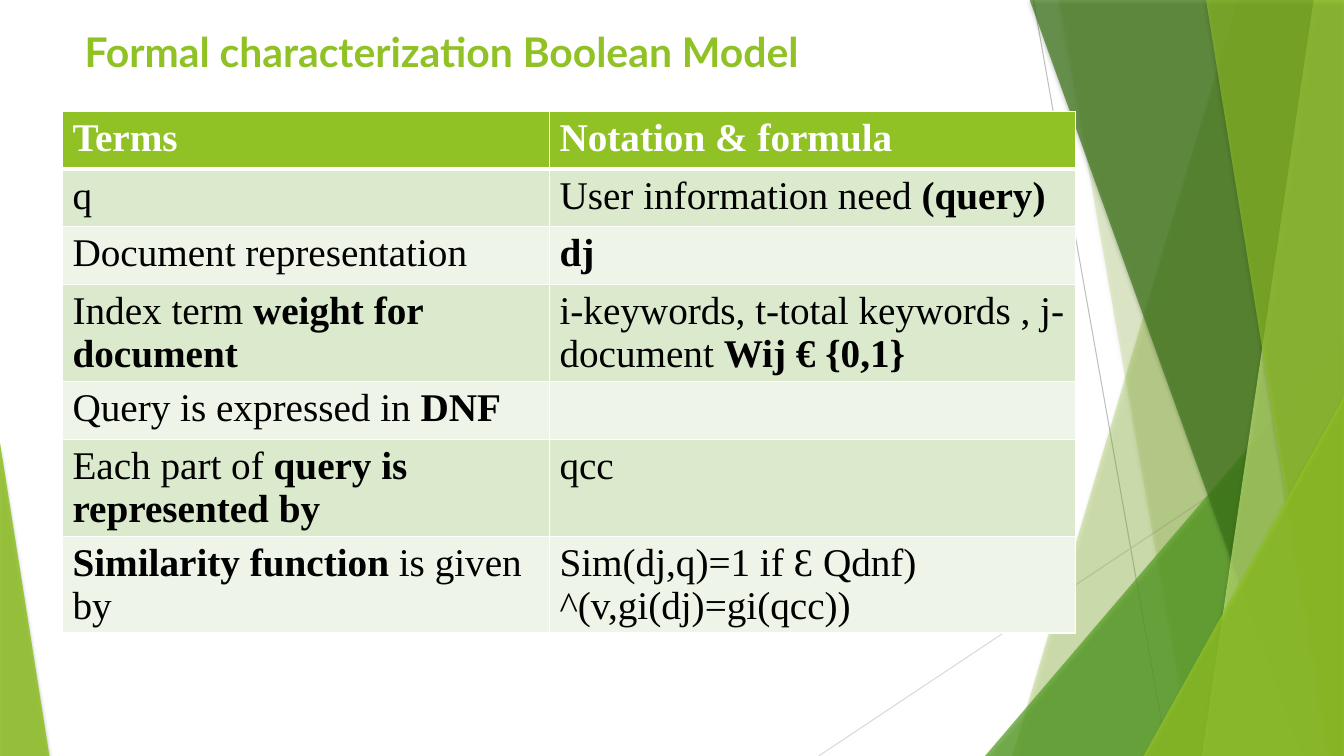
"""Build the slide on the formal characterization of the Boolean model."""
from lxml import etree
from pptx import Presentation
from pptx.dml.color import RGBColor
from pptx.enum.shapes import MSO_CONNECTOR, MSO_SHAPE
from pptx.enum.text import MSO_ANCHOR, PP_ALIGN
from pptx.oxml.ns import qn
from pptx.util import Inches, Pt

LINE = MSO_CONNECTOR.STRAIGHT
WEDGE = MSO_SHAPE.ISOSCELES_TRIANGLE
TOP = MSO_ANCHOR.TOP
LEFT = PP_ALIGN.LEFT

HUES = {
    "lime": "90C226", "green": "54A021", "dark": "3F7819", "pale": "C0E474",
    "band": "DBE9CC", "light": "EEF4E7", "white": "FFFFFF", "black": "000000",
    "gray": "BFBFBF", "mist": "D9D9D9",
}
WIDE, HIGH, EDGE = 13.33, 7.5, -0.01

LINES = [
    ((10.25, 0), (11.58, HIGH), "gray"),
    ((WIDE, 4.03), (8.12, HIGH), "mist"),
]
# Each panel reaches the right edge; only its left side varies.
RIGHT = [(WIDE, EDGE), (WIDE, HIGH)]
BACK = [(12.28, 10.04, "lime", 30), (10.5, 11.82, "lime", 20)]
FRONT = [
    (10.21, 12.91, "dark", 70),
    (13.03, 11.92, "pale", 70),
    (11.96, 13.17, "lime", 65),
]
DEEP = ((9.77, 3.33, 3.56, 4.17), 1, "green", 72)
NEAR = [
    ((11.34, 3.93, 1.99, 3.57), 1, "lime", 80),
    ((0, 4.39, 0.49, 3.11), 0, "lime", 85),
]

COLS = [4.83, 5.22]
TALL = [0.57, 0.57, 0.57, 0.97, 0.57, 0.96, 0.96]
ROWS = [
    ("*Terms", "*Notation & formula"),
    ("q", "User information need *(query)"),
    ("Document representation", "*dj"),
    ("Index term *weight for document",
     "i-keywords, t-total keywords , j-document *Wij € {0,1}"),
    ("Query is expressed in *DNF", ""),
    ("Each part of *query is represented by", "qcc"),
    ("*Similarity function* is given by",
     "Sim(dj,q)=1 if Ɛ Qdnf) ^(v,gi(dj)=gi(qcc))"),
]


def hue(name):
    """Return the named colour."""
    return RGBColor.from_string(HUES[name])


def tint(node, name, alpha=100):
    """Add a colour with an opacity in percent to an XML node."""
    color = etree.SubElement(node, qn("a:srgbClr"), val=HUES[name])
    if alpha < 100:
        etree.SubElement(color, qn("a:alpha"), val=str(alpha * 1000))


class Deck:
    """Hold the style and the current slide."""

    def __init__(self):
        """Start a deck with one title-only slide."""
        self.prs = Presentation()
        self.prs.slide_width = Inches(WIDE)
        self.prs.slide_height = Inches(HIGH)
        self.slide = self.prs.slides.add_slide(self.prs.slide_layouts[5])
        self.shapes = self.slide.shapes

    def line(self, start, end, color):
        """Draw a thin straight line."""
        ends = [Inches(v) for v in (*start, *end)]
        line = self.shapes.add_connector(LINE, *ends)
        line.line.color.rgb = hue(color)
        line.line.width = Pt(0.75)
        etree.SubElement(line._element.spPr, qn("a:effectLst"))

    def glass(self, shape, color, alpha):
        """Give a shape a clear fill and a soft shadow."""
        shape.fill.solid()
        shape.fill.fore_color.rgb = hue(color)
        shape.line.fill.background()
        shape.shadow.inherit = False
        props = shape._element.spPr
        paint = props.find(qn("a:solidFill"))
        paint.clear()
        tint(paint, color, alpha)
        shade = etree.SubElement(
            props.find(qn("a:effectLst")), qn("a:outerShdw"),
            blurRad=str(Pt(3)), dist=str(Pt(2)), dir="5400000", rotWithShape="0")
        tint(shade, "black", 35)

    def panel(self, top, base, color, alpha):
        """Draw a panel from a slanted left side to the right edge."""
        form = self.shapes.build_freeform(Inches(top), Inches(EDGE))
        points = [*RIGHT, (base, HIGH)]
        form.add_line_segments([(Inches(x), Inches(y)) for x, y in points])
        self.glass(form.convert_to_shape(), color, alpha)

    def wedge(self, box, peak, color, alpha):
        """Draw a triangle with its peak at one side."""
        shape = self.shapes.add_shape(WEDGE, *[Inches(v) for v in box])
        shape.adjustments[0] = peak
        self.glass(shape, color, alpha)

    def title(self, text, box):
        """Place and format the title in front of the panels."""
        title = self.shapes.title
        title.left, title.top, title.width, title.height = map(Inches, box)
        frame = title.text_frame
        frame.text = text
        frame.word_wrap = True
        frame.vertical_anchor = TOP
        para = frame.paragraphs[0]
        para.alignment = LEFT
        self.font(para.font, "Lato", 29.2, "lime")
        para.font.bold = True
        self.shapes._spTree.append(title._element)

    def font(self, font, name, size, color):
        """Set the name, size and colour of a font."""
        font.name = name
        font.size = Pt(size)
        font.color.rgb = hue(color)

    def cell(self, cell, text, row):
        """Fill one table cell; an asterisk switches bold on and off."""
        para = cell.text_frame.paragraphs[0]
        for i, part in enumerate(text.split("*")):
            if part:
                run = para.add_run()
                run.text = part
                run.font.bold = i % 2 == 1
        self.font(para.font, "Times New Roman", 28, "black" if row else "white")
        props = cell._tc.get_or_add_tcPr()
        for side in "LRTB":
            thick = (row, side) in ((0, "B"), (1, "T"))
            edge = etree.SubElement(
                props, qn("a:ln" + side), w=str(Pt(3 if thick else 0.96)))
            tint(etree.SubElement(edge, qn("a:solidFill")), "white")
        cell.fill.solid()
        band = "band" if row % 2 else "light"
        cell.fill.fore_color.rgb = hue(band if row else "lime")

    def table(self, left, top):
        """Draw the table of terms."""
        table = self.shapes.add_table(
            len(ROWS), len(COLS), Inches(left), Inches(top),
            Inches(sum(COLS)), Inches(sum(TALL))).table
        for col, width in zip(table.columns, COLS):
            col.width = Inches(width)
        for r, texts in enumerate(ROWS):
            table.rows[r].height = Inches(TALL[r])
            for c, text in enumerate(texts):
                self.cell(table.cell(r, c), text, r)


def main():
    """Build and save the slide."""
    deck = Deck()
    for item in LINES:
        deck.line(*item)
    for item in BACK:
        deck.panel(*item)
    deck.wedge(*DEEP)
    for item in FRONT:
        deck.panel(*item)
    for item in NEAR:
        deck.wedge(*item)
    deck.title("Formal characterization Boolean Model", (0.74, 0.21, 9.4, 0.9))
    deck.table(0.62, 1.11)
    deck.prs.save("out.pptx")


if __name__ == "__main__":
    main()
